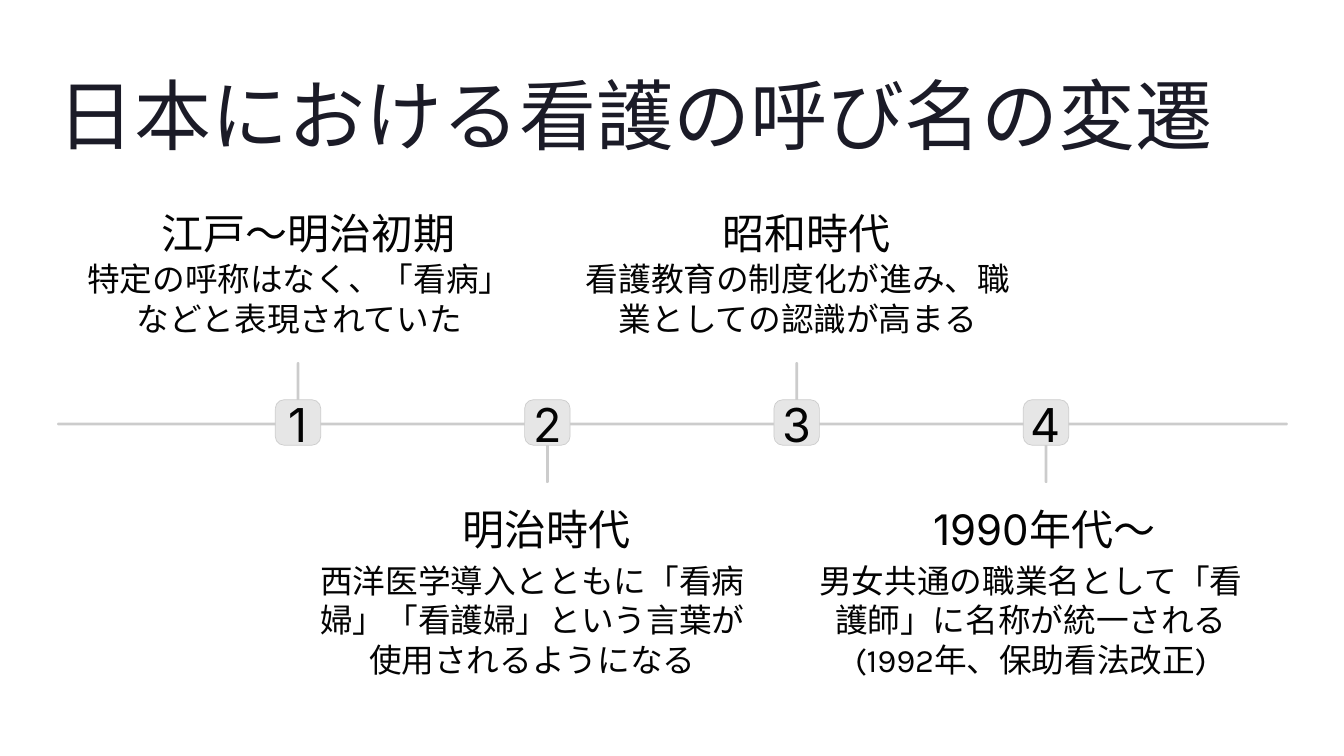
from dataclasses import dataclass

from pptx import Presentation
from pptx import util as u
from pptx.dml import color as c
from pptx.enum import shapes as sh, text as t

INK = c.RGBColor(0x03, 0x03, 0x03)
TITLE_INK = c.RGBColor(0x1B, 0x1B, 0x27)
RULE_GREY = c.RGBColor(0xCC, 0xCC, 0xCC)
BADGE_GREY = c.RGBColor(0xE6, 0xE6, 0xE6)

# Timeline geometry in points
MARGIN, CONTENT_WIDTH = 49, 1054.8
FIRST_CENTER, STEP = 255.5, 213.7
AXIS_TOP, THICKNESS = 362.2, 2.4
STEM_LENGTH = 51.8
BADGE_SIZE, BADGE_TOP = 38.9, 342.7
NUMBER_WIDTH, NUMBER_TOP, NUMBER_HEIGHT = 25.9, 339.4, 32.4
HEADING_WIDTH, HEADING_HEIGHT = 270, 27.4
CAPTION_WIDTH, CAPTION_HEIGHT = 378.7, 45.4

# Text formats
TITLE = {"name": "Inter", "size": u.Pt(66)}
NUMBER = {"name": "Inter", "size": u.Pt(40)}
HEADING = {"name": "Inter", "size": u.Pt(36)}
CAPTION = {"name": "Karla", "size": u.Pt(28)}
FRAME = {"margin_left": 0, "margin_top": 0, "margin_right": 0, "margin_bottom": 0}


@dataclass
class Side:
    """Placement of a period's parts above or below the axis."""
    stem_top: float
    heading_top: float
    heading_shift: float
    caption_top: float
    caption_shift: float


@dataclass
class Period:
    heading: str
    caption: str
    side: Side


ABOVE = Side(AXIS_TOP - STEM_LENGTH, 177.8, 8.8, 222.3, 1)
BELOW = Side(AXIS_TOP, 431.8, -1.2, 480.8, -13)

PERIODS = [
    Period("江戸〜明治初期", "特定の呼称はなく、「看病」などと表現されていた", ABOVE),
    Period("明治時代", "西洋医学導入とともに「看病婦」「看護婦」という言葉が使用されるようになる", BELOW),
    Period("昭和時代", "看護教育の制度化が進み、職業としての認識が高まる", ABOVE),
    Period("1990年代〜", "男女共通の職業名として「看護師」に名称が統一される(1992年、保助看法改正)", BELOW),
]


def add_label(slide, wording: str, left: float, top: float, width: float, height: float,
              font_format: dict, ink: c.RGBColor = INK,
              align: t.PP_ALIGN = t.PP_ALIGN.CENTER, wrap: bool = False) -> None:
    box = slide.shapes.add_textbox(u.Pt(left), u.Pt(top), u.Pt(width), u.Pt(height))
    frame = box.text_frame
    for key, value in FRAME.items():
        setattr(frame, key, value)
    frame.word_wrap = wrap
    paragraph = frame.paragraphs[0]
    paragraph.alignment = align
    run = paragraph.add_run()
    run.text = wording
    for key, value in font_format.items():
        setattr(run.font, key, value)
    run.font.color.rgb = ink


def add_rounded(slide, left: float, top: float, width: float, height: float,
                fill: c.RGBColor, rounding: float = 0.5, outlined: bool = False) -> None:
    block = slide.shapes.add_shape(sh.MSO_SHAPE.ROUNDED_RECTANGLE,
                                   u.Pt(left), u.Pt(top), u.Pt(width), u.Pt(height))
    block.adjustments[0] = rounding
    block.shadow.inherit = False
    block.fill.solid()
    block.fill.fore_color.rgb = fill
    if outlined:
        block.line.color.rgb = RULE_GREY
        block.line.width = u.Pt(0.6)
    else:
        block.line.fill.background()


def add_period(slide, number: int, period: Period) -> None:
    center = FIRST_CENTER + (number - 1) * STEP
    side = period.side
    add_rounded(slide, center - THICKNESS / 2, side.stem_top, THICKNESS, STEM_LENGTH, RULE_GREY)
    add_rounded(slide, center - BADGE_SIZE / 2, BADGE_TOP, BADGE_SIZE, BADGE_SIZE,
                BADGE_GREY, rounding=0.19, outlined=True)
    add_label(slide, str(number), center - NUMBER_WIDTH / 2, NUMBER_TOP,
              NUMBER_WIDTH, NUMBER_HEIGHT, NUMBER)
    add_label(slide, period.heading, center + side.heading_shift - HEADING_WIDTH / 2,
              side.heading_top, HEADING_WIDTH, HEADING_HEIGHT, HEADING)
    add_label(slide, period.caption, center + side.caption_shift - CAPTION_WIDTH / 2,
              side.caption_top, CAPTION_WIDTH, CAPTION_HEIGHT, CAPTION, wrap=True)


def main() -> None:
    deck = Presentation()
    deck.slide_width, deck.slide_height = u.Pt(1152), u.Pt(648)
    slide = deck.slides.add_slide(deck.slide_layouts[6])

    # Title
    add_label(slide, "日本における看護の呼び名の変遷", MARGIN, 58, CONTENT_WIDTH, 54,
              TITLE, TITLE_INK, t.PP_ALIGN.LEFT)

    # Timeline axis and periods
    add_rounded(slide, MARGIN, AXIS_TOP, CONTENT_WIDTH, THICKNESS, RULE_GREY)
    for number, period in enumerate(PERIODS, start=1):
        add_period(slide, number, period)

    deck.save("out.pptx")


if __name__ == "__main__":
    main()
